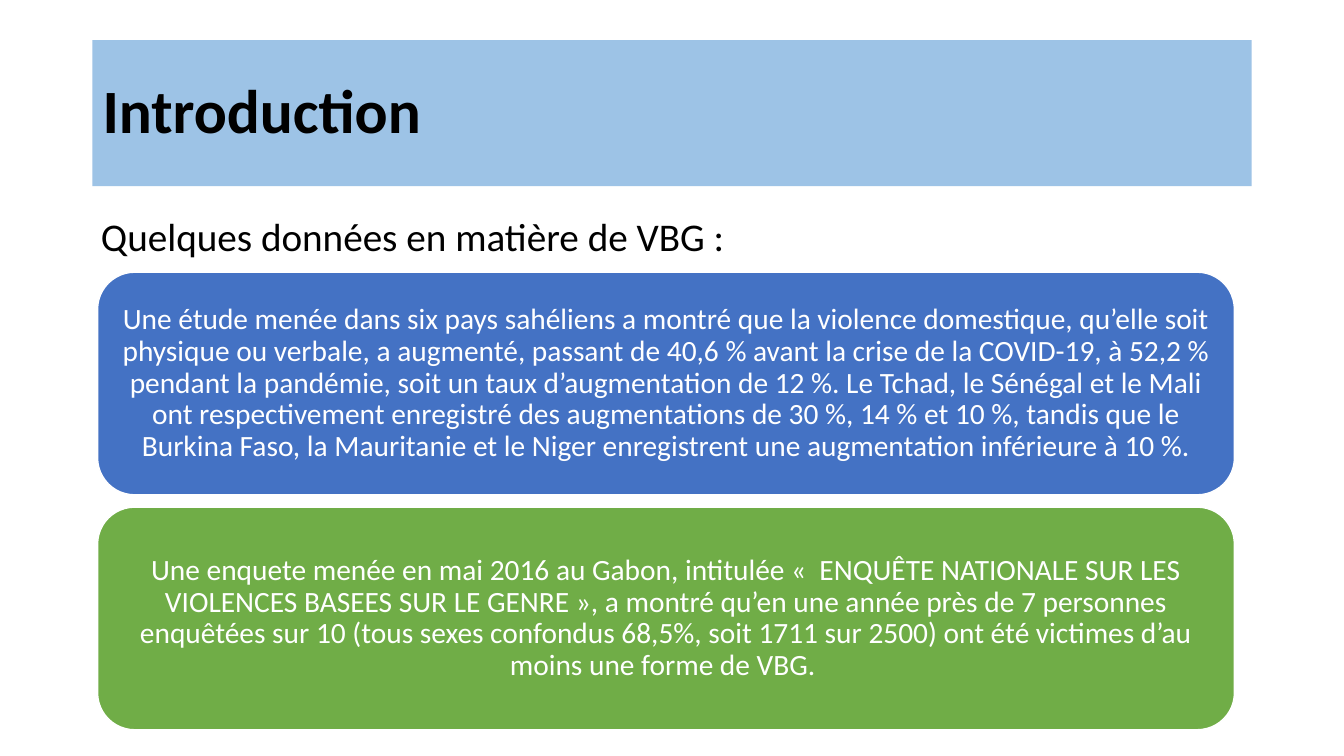
from dataclasses import dataclass

from lxml.etree import SubElement
from pptx import Presentation
from pptx.dml.color import RGBColor
from pptx.enum.shapes import MSO_SHAPE
from pptx.enum.text import MSO_ANCHOR, MSO_AUTO_SIZE, PP_ALIGN
from pptx.oxml.ns import qn
from pptx.slide import Slide
from pptx.util import Cm, Pt

FONT = "Calibri"
BLACK, WHITE = "000000", "FFFFFF"
CARD_LEFT, CARD_TOP = 2.46, 6.86
CARD_WIDTH, CARD_HEIGHT = 28.65, 5.61
CARD_PITCH = 5.92


@dataclass
class Finding:
    text: str
    fill: str


FINDINGS = [
    Finding(
        "Une étude menée dans six pays sahéliens a montré que la violence domestique, "
        "qu’elle soit physique ou verbale, a augmenté, passant de 40,6 % avant la crise "
        "de la COVID-19, à 52,2 % pendant la pandémie, soit un taux d’augmentation de "
        "12 %. Le Tchad, le Sénégal et le Mali ont respectivement enregistré des "
        "augmentations de 30 %, 14 % et 10 %, tandis que le Burkina Faso, la Mauritanie "
        "et le Niger enregistrent une augmentation inférieure à 10 %.",
        "4472C4",
    ),
    Finding(
        "Une enquete menée en mai 2016 au Gabon, intitulée «  ENQUÊTE NATIONALE SUR LES "
        "VIOLENCES BASEES SUR LE GENRE », a montré qu’en une année près de 7 personnes "
        "enquêtées sur 10 (tous sexes confondus 68,5%, soit 1711 sur 2500) ont été "
        "victimes d’au moins une forme de VBG. ",
        "70AD47",
    ),
]


def paint(target, colour: str) -> None:
    """Give a fill a solid colour."""
    target.solid()
    target.fore_color.rgb = RGBColor.from_string(colour)


def write(shape, text: str, size: float, colour: str, align: PP_ALIGN,
          anchor: MSO_ANCHOR, bold: bool = False) -> None:
    """Set the single paragraph of a shape, without a bullet."""
    frame = shape.text_frame
    frame.word_wrap = True
    frame.auto_size = MSO_AUTO_SIZE.NONE
    frame.vertical_anchor = anchor
    frame.text = text
    paragraph = frame.paragraphs[0]
    paragraph.alignment = align
    paragraph.line_spacing = 0.9
    paragraph.space_before = Pt(0)
    properties = paragraph._p.get_or_add_pPr()
    properties.set("marL", "0")
    properties.set("indent", "0")
    SubElement(properties, qn("a:buNone"))
    font = paragraph.font
    font.name, font.size, font.bold = FONT, Pt(size), bold
    paint(font.fill, colour)


def place(shape, left: float, top: float, width: float, height: float) -> None:
    shape.left, shape.top = Cm(left), Cm(top)
    shape.width, shape.height = Cm(width), Cm(height)


def draw_finding(slide: Slide, finding: Finding, top: float) -> None:
    """Draw a rounded card with its text laid over the full width."""
    area = Cm(CARD_LEFT), Cm(top), Cm(CARD_WIDTH), Cm(CARD_HEIGHT)
    card = slide.shapes.add_shape(MSO_SHAPE.ROUNDED_RECTANGLE, *area)
    card.shadow.inherit = False
    paint(card.fill, finding.fill)
    paint(card.line.fill, WHITE)
    card.line.width = Pt(1)

    statement = slide.shapes.add_textbox(*area)
    frame = statement.text_frame
    frame.margin_left = frame.margin_right = Cm(0.22)
    frame.margin_top = frame.margin_bottom = Cm(0.11)
    write(statement, finding.text, 21, WHITE, PP_ALIGN.CENTER, MSO_ANCHOR.MIDDLE)


def main() -> None:
    presentation = Presentation()
    presentation.slide_width, presentation.slide_height = Cm(33.87), Cm(19.05)
    slide = presentation.slides.add_slide(presentation.slide_layouts[1])

    # Title band
    title = slide.shapes.title
    place(title, 2.33, 1.01, 29.21, 3.68)
    paint(title.fill, "9DC3E6")
    write(title, "Introduction", 44, BLACK, PP_ALIGN.LEFT, MSO_ANCHOR.MIDDLE, bold=True)

    # Lead-in sentence
    lead_in = slide.placeholders[1]
    place(lead_in, 2.29, 5.36, 29.21, 12.09)
    paint(lead_in.fill, WHITE)
    write(lead_in, "Quelques données en matière de VBG :", 28, BLACK,
          PP_ALIGN.LEFT, MSO_ANCHOR.TOP)

    # Findings, one card below the other
    for row, finding in enumerate(FINDINGS):
        draw_finding(slide, finding, CARD_TOP + row * CARD_PITCH)

    presentation.save("out.pptx")


if __name__ == "__main__":
    main()
